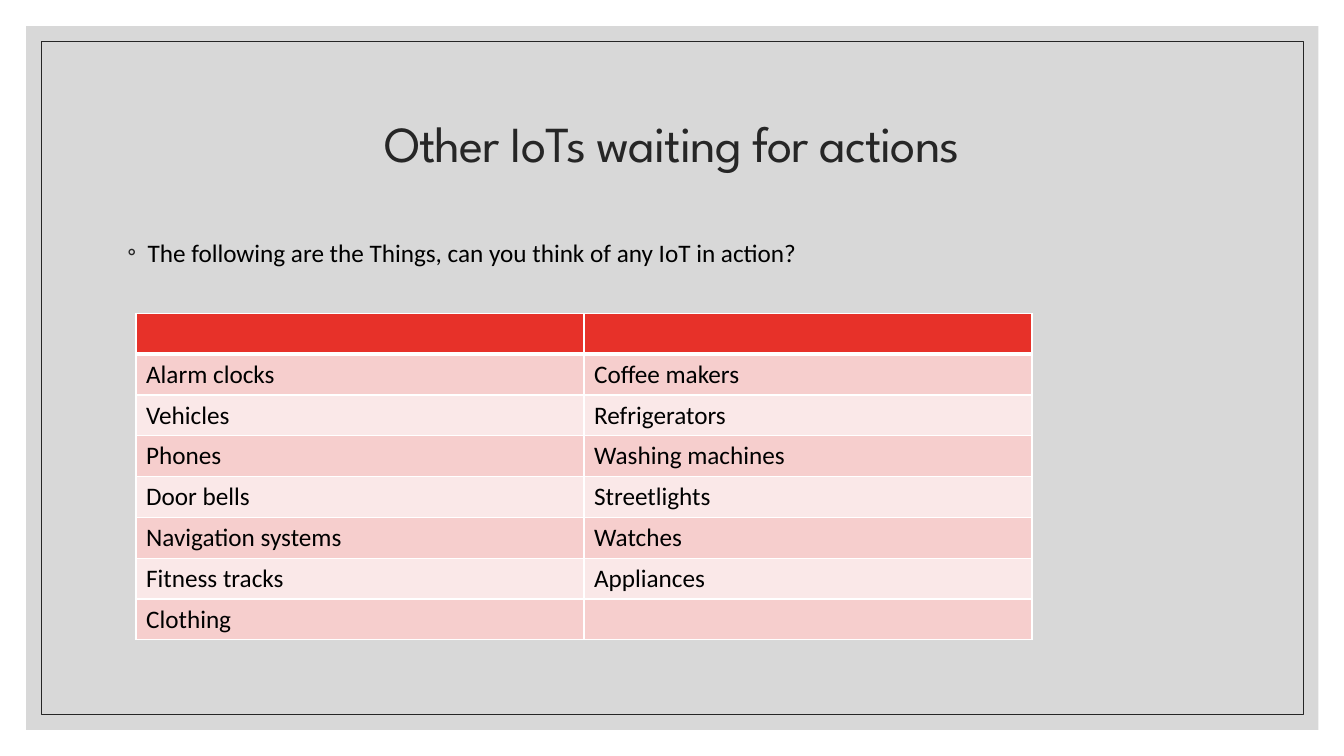
from dataclasses import dataclass

from lxml import etree
from pptx import Presentation
from pptx.dml.color import RGBColor
from pptx.enum import shapes, text
from pptx.oxml import ns
from pptx.util import Pt


@dataclass(frozen=True)
class Theme:
    panel: str = "BFBFBF"
    ink: str = "262626"
    body: str = "000000"
    rule: str = "FFFFFF"
    header: str = "E73129"
    bands: tuple = ("F6CECD", "FAE8E8")
    title_font: str = "League Spartan"
    body_font: str = "Calibri"
    title_size: int = 36
    body_size: int = 18


THEME = Theme()
THINGS = [
    ("", ""),
    ("Alarm clocks", "Coffee makers"),
    ("Vehicles", "Refrigerators"),
    ("Phones", "Washing machines"),
    ("Door bells", "Streetlights"),
    ("Navigation systems", "Watches"),
    ("Fitness tracks", "Appliances"),
    ("Clothing", ""),
]


def add_element(parent, tag, **attributes):
    return etree.SubElement(parent, ns.qn(tag), **attributes)


def add_color(parent, color):
    fill = add_element(parent, "a:solidFill")
    add_element(fill, "a:srgbClr", val=color)


def style_text(para, font, size, color):
    for span in para.runs:
        span.font.name = font
        span.font.size = Pt(size)
        span.font.color.rgb = RGBColor.from_string(color)


def add_frame(page, left, top, width, height):
    frame = page.shapes.add_shape(
        shapes.MSO_SHAPE.RECTANGLE, Pt(left), Pt(top), Pt(width), Pt(height))
    frame.shadow.inherit = False
    return frame


def add_panel(page):
    panel = add_frame(page, 18.7, 18.7, 923, 502.6)
    panel.fill.solid()
    panel.fill.fore_color.rgb = RGBColor.from_string(THEME.panel)
    panel.line.fill.background()
    color = panel.fill._xPr.find(".//" + ns.qn("a:srgbClr"))
    add_element(color, "a:alpha", val="60000")


def add_outline(page):
    outline = add_frame(page, 29.5, 29.5, 901.4, 481)
    outline.fill.background()
    outline.line.color.rgb = RGBColor.from_string(THEME.ink)
    outline.line.width = Pt(0.5)


def add_text(page, top, height, words, anchor):
    box = page.shapes.add_textbox(Pt(84), Pt(top), Pt(792), Pt(height))
    box.text_frame.word_wrap = True
    box.text_frame.vertical_anchor = anchor
    box.text_frame.text = words
    return box.text_frame.paragraphs[0]


def add_title(page, words):
    para = add_text(page, 50.4, 108, words, text.MSO_ANCHOR.MIDDLE)
    para.alignment = text.PP_ALIGN.CENTER
    para.line_spacing = 0.9
    style_text(para, THEME.title_font, THEME.title_size, THEME.ink)
    para.runs[0].font._element.set("spc", "-70")


def add_bullet(page, words):
    para = add_text(page, 165.6, 303, words, text.MSO_ANCHOR.TOP)
    para.space_before = Pt(9)
    style_text(para, THEME.body_font, THEME.body_size, THEME.body)
    properties = para._p.get_or_add_pPr()
    properties.set("marL", str(Pt(14.4)))
    properties.set("indent", str(Pt(-14.4)))
    color = add_element(properties, "a:buClr")
    add_element(color, "a:srgbClr", val=THEME.ink)
    add_element(properties, "a:buFont", typeface=THEME.body_font)
    add_element(properties, "a:buChar", char="◦")


def set_borders(cell, top, bottom):
    properties = cell._tc.get_or_add_tcPr()
    for side, width in (("L", 1), ("R", 1), ("T", top), ("B", bottom)):
        line = add_element(properties, f"a:ln{side}", w=str(Pt(width)))
        add_color(line, THEME.rule)


def add_things_table(page, rows):
    row_height = 29.16
    table = page.shapes.add_table(
        len(rows), 2, Pt(97.2), Pt(223.9), Pt(640), Pt(row_height * len(rows))).table
    for row, words in enumerate(rows):
        table.rows[row].height = Pt(row_height)
        color = THEME.bands[(row - 1) % 2] if row else THEME.header
        for column, label in enumerate(words):
            cell = table.cell(row, column)
            set_borders(cell, 3 if row == 1 else 1, 3 if row == 0 else 1)
            cell.fill.solid()
            cell.fill.fore_color.rgb = RGBColor.from_string(color)
            cell.text_frame.text = label
            style_text(cell.text_frame.paragraphs[0],
                       THEME.body_font, THEME.body_size, THEME.body)


def main():
    deck = Presentation()
    deck.slide_width, deck.slide_height = Pt(960), Pt(540)
    page = deck.slides.add_slide(deck.slide_layouts[6])
    add_panel(page)
    add_outline(page)
    add_title(page, "Other IoTs waiting for actions")
    add_bullet(page, "The following are the Things, can you think of any IoT in action?")
    add_things_table(page, THINGS)
    deck.save("out.pptx")


if __name__ == "__main__":
    main()
